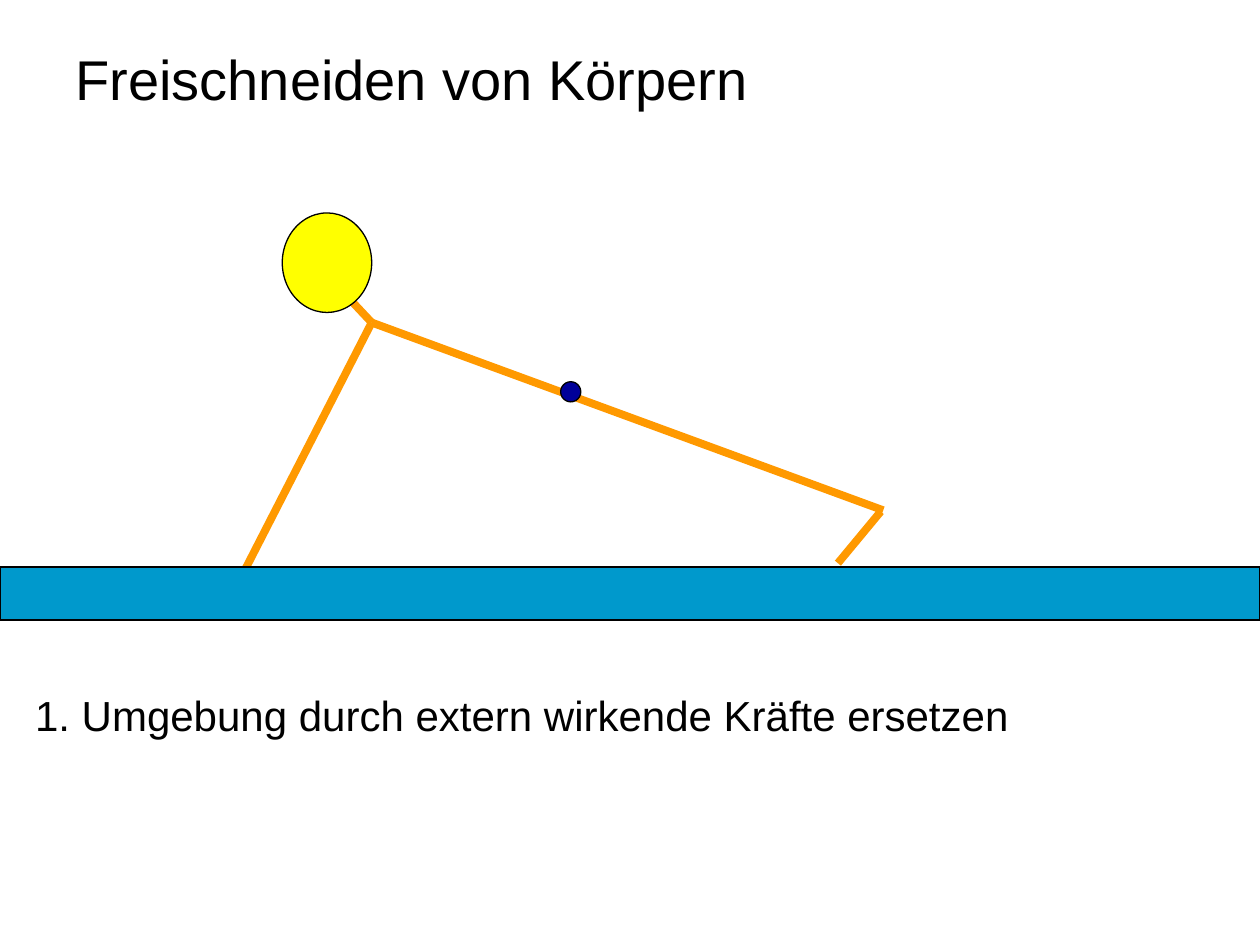
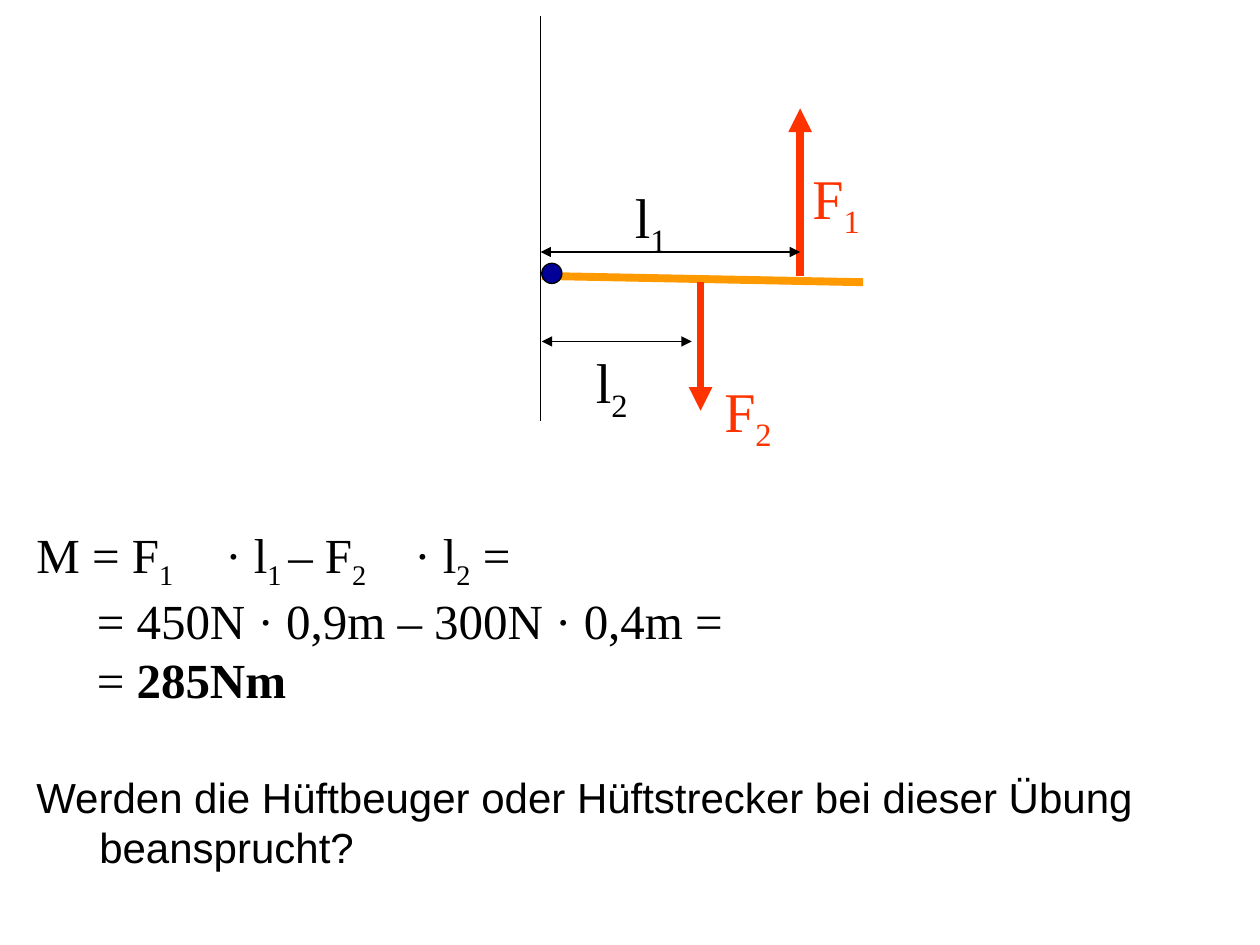
from lxml import etree
from pptx import Presentation
from pptx.dml.color import RGBColor
from pptx.enum.shapes import MSO_CONNECTOR, MSO_SHAPE
from pptx.enum.text import MSO_ANCHOR, MSO_AUTO_SIZE
from pptx.oxml.ns import qn
from pptx.util import Inches, Pt

STRAIGHT = MSO_CONNECTOR.STRAIGHT
OVAL, RECTANGLE = MSO_SHAPE.OVAL, MSO_SHAPE.RECTANGLE
MIDDLE = MSO_ANCHOR.MIDDLE
GROW = MSO_AUTO_SIZE.SHAPE_TO_FIT_TEXT

BLACK = RGBColor(0x00, 0x00, 0x00)
LIMB = RGBColor(0xFF, 0x99, 0x00)
HEAD = RGBColor(0xFF, 0xFF, 0x00)
JOINT = RGBColor(0x00, 0x00, 0x99)
FLOOR = RGBColor(0x00, 0x99, 0xCC)
FORCE = RGBColor(0xFF, 0x33, 0x00)

TITLE = {"name": "Arial", "size": Pt(32)}
BODY = {"name": "Arial", "size": Pt(24)}
SYMBOL = {"name": "Times New Roman", "size": Pt(32)}
FORMULA = {"name": "Times New Roman", "size": Pt(28)}
BOLD_FORMULA = {**FORMULA, "bold": True}

JOINT_SIZE = 0.16
LIMB_WIDTH = 4.5


def add_line(page, start, end, color, width, arrows=()):
    """Draw a straight line with triangles at the named ends."""
    line = page.shapes.add_connector(STRAIGHT, *map(Inches, start + end))
    line.line.color.rgb = color
    line.line.width = Pt(width)
    outline = line.line._get_or_add_ln()
    for arrow in arrows:
        etree.SubElement(outline, qn(f"a:{arrow}"), type="triangle")
    etree.SubElement(line._element.spPr, qn("a:effectLst"))


def add_outlined(page, kind, box, fill):
    """Draw a filled shape with a thin black outline."""
    shape = page.shapes.add_shape(kind, *map(Inches, box))
    shape.shadow.inherit = False
    shape.fill.solid()
    shape.fill.fore_color.rgb = fill
    shape.line.color.rgb = BLACK
    shape.line.width = Pt(0.75)


def add_joint(page, left, top):
    """Mark the hip joint."""
    add_outlined(page, OVAL, (left, top, JOINT_SIZE, JOINT_SIZE), JOINT)


def add_span(para, text, style, color, subscript=False):
    """Append one formatted run."""
    span = para.add_run()
    span.text = text
    for name, value in style.items():
        setattr(span.font, name, value)
    span.font.color.rgb = color
    if subscript:
        span._r.get_or_add_rPr().set("baseline", "-25000")


def write(para, text, style, color=BLACK):
    """Write text in which an underscore lowers the next character."""
    first, *others = text.split("_")
    add_span(para, first, style, color)
    for part in others:
        add_span(para, part[0], style, color, subscript=True)
        if part[1:]:
            add_span(para, part[1:], style, color)


def set_layout(para, margin=0, indent=0, tabs=()):
    """Set the indents and tab stops of a paragraph."""
    properties = para._p.get_or_add_pPr()
    properties.set("marL", str(Inches(margin)))
    properties.set("indent", str(Inches(indent)))
    if tabs:
        stops = etree.SubElement(properties, qn("a:tabLst"))
        for stop in tabs:
            etree.SubElement(stops, qn("a:tab"), pos=str(Inches(stop)), algn="l")


def add_frame(page, box):
    """Add an empty wrapping text box and return its frame."""
    frame = page.shapes.add_textbox(*map(Inches, box)).text_frame
    frame.word_wrap = True
    frame.auto_size = GROW
    return frame


def add_label(page, box, text, style, color=BLACK):
    """Add a text box with one paragraph."""
    frame = add_frame(page, box)
    write(frame.paragraphs[0], text, style, color)
    return frame


def add_title(page, text):
    """Add the slide title."""
    frame = add_label(page, (0.5, 0.25, 8.5, 0.74), text, TITLE)
    frame.auto_size = MSO_AUTO_SIZE.NONE
    frame.vertical_anchor = MIDDLE


def draw_figure(page, left, top):
    """Draw the figure in push-up position from the top left of its head."""
    def at(x, y):
        return left + x, top + y

    shoulder = at(0.71, 0.87)
    limbs = [
        (shoulder, at(4.77, 2.36)),
        (shoulder, at(-0.31, 2.86)),
        (at(0.56, 0.71), shoulder),
        (at(4.75, 2.37), at(4.41, 2.78)),
    ]
    for start, end in limbs:
        add_line(page, start, end, LIMB, LIMB_WIDTH)
    add_outlined(page, OVAL, (left, top, 0.71, 0.79), HEAD)
    add_joint(page, *at(2.21, 1.34))


def draw_lever(page, left, top):
    """Draw the lever with its forces and arms from the top of the axis."""
    def at(x, y):
        return left + x, top + y

    add_line(page, at(0.01, 2.06), at(2.56, 2.11), LIMB, LIMB_WIDTH)
    add_joint(page, *at(0.01, 1.96))
    add_line(page, at(0, 0), at(0, 3.21), BLACK, 0.75)
    forces = [
        ("F_1", at(2.06, 2.06), at(2.06, 0.73), at(2.06, 1.12)),
        ("F_2", at(1.27, 2.11), at(1.27, 3.13), at(1.36, 2.81)),
    ]
    for name, start, end, corner in forces:
        add_line(page, start, end, FORCE, LIMB_WIDTH, ["tailEnd"])
        add_label(page, (*corner, 1.57, 0.63), name, SYMBOL, FORCE)
    arms = [
        ("l_1", at(0, 1.87), at(2.06, 1.87), at(0.65, 1.27)),
        ("l_2", at(0.01, 2.58), at(1.2, 2.58), at(0.34, 2.58)),
    ]
    for name, start, end, corner in arms:
        add_line(page, start, end, BLACK, 1, ["headEnd", "tailEnd"])
        add_label(page, (*corner, 0.55, 0.63), name, SYMBOL)


def write_moment(page, box):
    """Write the moment equation and the question below it."""
    frame = add_frame(page, box)
    equation = frame.paragraphs[0]
    set_layout(equation, tabs=(1.66, 2.8, 4))
    write(equation, "M = F_1\t· l_1\t– F_2\t· l_2 =", FORMULA)
    values, result, question = (frame.add_paragraph() for _ in range(3))
    for para in (values, result):
        set_layout(para, margin=0.48)
    write(values, "= 450N · 0,9m – 300N · 0,4m =", FORMULA)
    write(result, "= ", FORMULA)
    write(result, "285Nm", BOLD_FORMULA)
    set_layout(question, margin=0.5, indent=-0.5)
    question.space_before = Pt(36)
    write(question, "Werden die Hüftbeuger oder Hüftstrecker bei dieser Übung beansprucht?", BODY)


def build_body_slide(page):
    """Build the slide about isolating the body."""
    draw_figure(page, 2.24, 1.69)
    add_label(page, (0.18, 5.42, 8.85, 0.5),
              "1. Umgebung durch extern wirkende Kräfte ersetzen", BODY)
    add_title(page, "Freischneiden von Körpern")
    add_outlined(page, RECTANGLE, (0, 4.5, 10, 0.42), FLOOR)


def build_moment_slide(page):
    """Build the slide about the moment at the hip."""
    draw_lever(page, 4.29, 0.13)
    write_moment(page, (0.19, 4.11, 9.5, 2.86))


def main():
    """Build and save the deck."""
    deck = Presentation()
    deck.slide_width, deck.slide_height = Inches(10), Inches(7.5)
    for build in (build_body_slide, build_moment_slide):
        build(deck.slides.add_slide(deck.slide_layouts[6]))
    deck.save("out.pptx")


if __name__ == "__main__":
    main()
